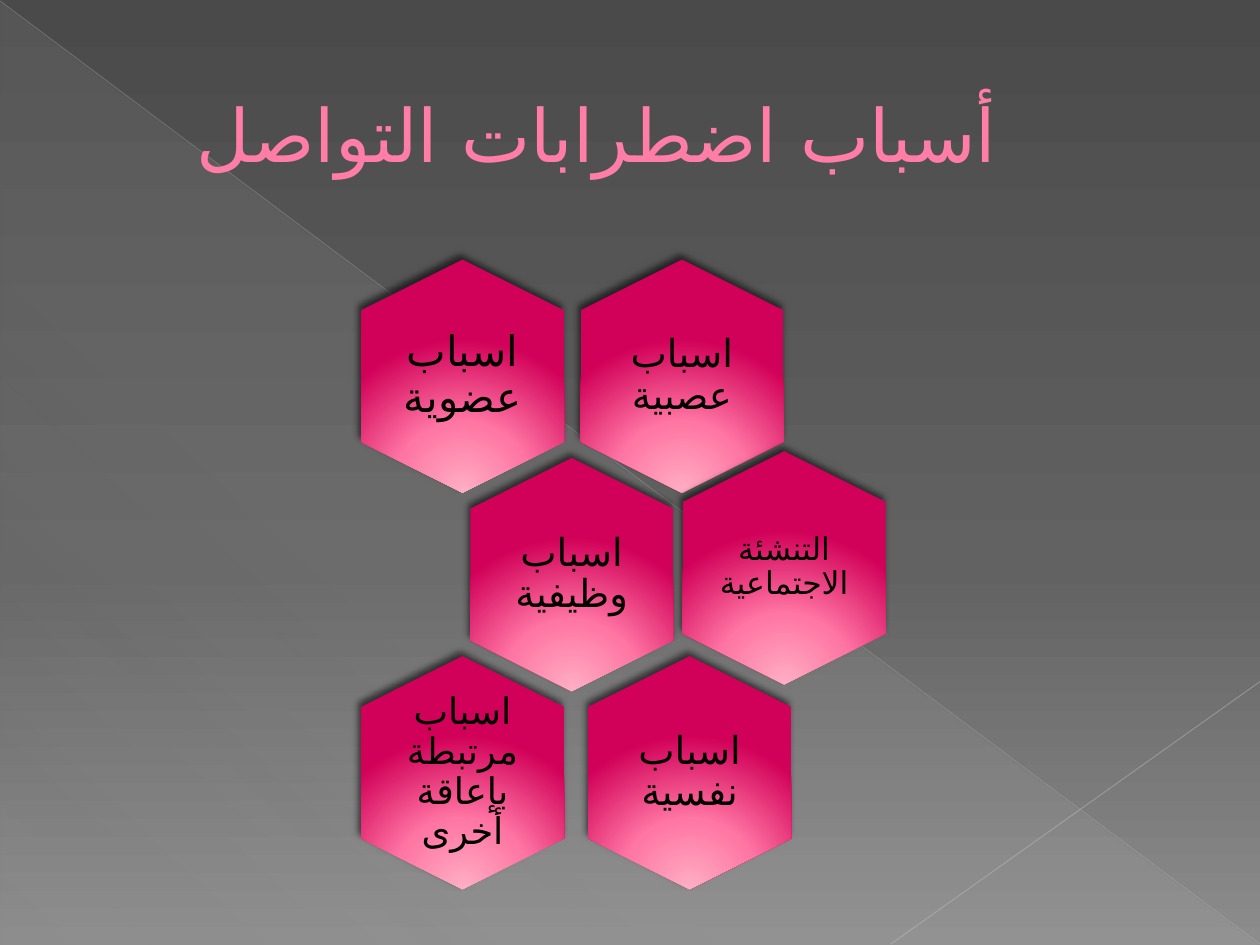
from dataclasses import dataclass

from lxml import etree
from pptx import Presentation
from pptx.dml.color import RGBColor
from pptx.enum.shapes import MSO_CONNECTOR, MSO_SHAPE
from pptx.enum.text import MSO_ANCHOR, PP_ALIGN
from pptx.oxml import parse_xml
from pptx.oxml.ns import nsdecls, qn
from pptx.util import Pt

LINE = MSO_CONNECTOR.STRAIGHT
HEX = MSO_SHAPE.HEXAGON
WEDGE = MSO_SHAPE.RIGHT_TRIANGLE
MIDDLE = MSO_ANCHOR.MIDDLE
CENTER = PP_ALIGN.CENTER


@dataclass(frozen=True)
class Theme:
    font: str = "Quicksand"
    script: str = "DejaVu Sans"
    title: str = "FF7DA7"
    edge: str = "B12761"
    ink: str = "000000"
    rays: tuple = ("BFBFBF", "C6C6C6")
    back: tuple = ((0, "4A4A4A", 100), (60, "626262", 100), (100, "8C8C8C", 100))
    veil: tuple = ((0, "D2D2D2", 10), (70, "D2D2D2", 8), (100, "D2D2D2", 1))
    glow: tuple = ((0, "FFAFC5", 100), (46, "FF75A3", 100), (100, "D10058", 100))
    big: int = 42


THEME = Theme()
GLOW = ('<a:path path="circle"><a:fillToRect l="50000" t="155000" '
        'r="50000" b="-55000"/></a:path>')

# text, size, inset, centre measured from the centre of the first cell
CELLS = [
    ("اسباب عصبية", 22, 6.5, 125.4, 0),
    ("اسباب عضوية", 24, 0, 0, 0),
    ("اسباب وظيفية", 22, 6.5, 62.4, 113.4),
    ("التنشئة الاجتماعية", 18, 0, 183.8, 109.5),
    ("اسباب نفسية", 22, 6.5, 129.8, 226.6),
    ("اسباب مرتبطة بإعاقة أخرى", 21, 0, 0, 226.6),
]


def node(tag, body, attrs=""):
    return parse_xml(f'<a:{tag} {nsdecls("a")} {attrs}>{body}</a:{tag}>')


def tint(color, alpha):
    return f'<a:srgbClr val="{color}"><a:alpha val="{alpha * 1000}"/></a:srgbClr>'


def linear(angle):
    return f'<a:lin ang="{angle * 60000}" scaled="0"/>'


def blend(owner, stops, way):
    """Swap the solid fill of owner for a gradient."""
    steps = "".join(f'<a:gs pos="{pos * 1000}">{tint(color, alpha)}</a:gs>'
                    for pos, color, alpha in stops)
    fill = node("gradFill", f"<a:gsLst>{steps}</a:gsLst>{way}", 'rotWithShape="0"')
    owner.replace(owner.find(qn("a:solidFill")), fill)


def add_text(slide, box, text, size, color, inset):
    """Add centred right-to-left text and return its paragraph."""
    frame = slide.shapes.add_textbox(*map(Pt, box)).text_frame
    frame.word_wrap = True
    frame.vertical_anchor = MIDDLE
    frame.margin_left = frame.margin_right = Pt(inset)
    frame.margin_top = frame.margin_bottom = Pt(inset)
    para = frame.paragraphs[0]
    para.text = text
    para.alignment = CENTER
    para.font.size = Pt(size)
    para.font.name = THEME.font
    para.font.color.rgb = RGBColor.from_string(color)
    props = para._p.get_or_add_pPr()
    props.set("rtl", "1")
    script = etree.SubElement(props.find(qn("a:defRPr")), qn("a:cs"))
    script.set("typeface", THEME.script)
    return para


def add_ray(slide, start, end, color, width, alpha):
    ray = slide.shapes.add_connector(LINE, *map(Pt, start + end))
    ray.line.width = Pt(width)
    ray.line.color.rgb = RGBColor.from_string(color)
    shade = ray.line._ln.find(".//" + qn("a:srgbClr"))
    etree.SubElement(shade, qn("a:alpha")).set("val", str(alpha * 1000))
    ray._element.spPr.append(node("effectLst", ""))


def add_back(slide, box):
    left, top, width, height = box
    right, base = left + width, top + height
    slide.background.fill.solid()
    blend(slide.element.find(".//" + qn("p:bgPr")), THEME.back, linear(90))
    wedge = slide.shapes.add_shape(
        WEDGE, Pt(left + 0.5), Pt(top + 1.2), Pt(width - 1), Pt(height - 1.2))
    wedge.shadow.inherit = False
    wedge.line.fill.background()
    wedge.fill.solid()
    blend(wedge._element.spPr, THEME.veil, linear(133))
    long, short = THEME.rays
    add_ray(slide, (left, top + 0.5), (right, base - 0.5), long, 0.39, 35)
    add_ray(slide, (right, base - 150.5), (right - 211, base - 0.5), short, 0.47, 45)


def add_title(slide, box):
    para = add_text(slide, box, "أسباب اضطرابات التواصل",
                    THEME.big, THEME.title, 3.6)
    props = para._p.get_or_add_pPr()
    props.set("marL", str(Pt(38)))
    props.set("indent", "0")
    edge = node("ln", f"<a:solidFill>{tint(THEME.edge, 100)}</a:solidFill>",
                f'w="{Pt(0.5)}"')
    props.find(qn("a:defRPr")).insert(0, edge)


def add_cell(slide, x, y, text, size, inset):
    """Add an upright hexagon and its label, both centred on x, y."""
    wide, high = 133.2, 116
    cell = slide.shapes.add_shape(
        HEX, Pt(x - wide / 2), Pt(y - high / 2), Pt(wide), Pt(high))
    cell.rotation = 90
    cell.adjustments[0] = 0.25
    cell.line.fill.background()
    cell.fill.solid()
    props = cell._element.spPr
    blend(props, THEME.glow, GLOW)
    shade = (f'<a:outerShdw blurRad="{Pt(4)}" dist="{Pt(3)}" dir="{245 * 60000}" '
             f'rotWithShape="0">{tint(THEME.ink, 60)}</a:outerShdw>')
    props.append(node("effectLst", shade))
    para = add_text(slide, (x - 40, y - 46, 80, 92), text, size, THEME.ink, inset)
    para.line_spacing = 0.9


def add_comb(slide, box):
    left, top = box[:2]
    for text, size, inset, x, y in CELLS:
        add_cell(slide, left + 58 + x, top + 66.6 + y, text, size, inset)


def main():
    deck = Presentation()
    deck.slide_width, deck.slide_height = Pt(720), Pt(540)
    slide = deck.slides.add_slide(deck.slide_layouts[6])
    add_back(slide, (0, 0, 720, 540))
    add_title(slide, (36, 21, 648, 110))
    add_comb(slide, (206.3, 148.3, 300, 360))
    deck.save("out.pptx")


if __name__ == "__main__":
    main()
